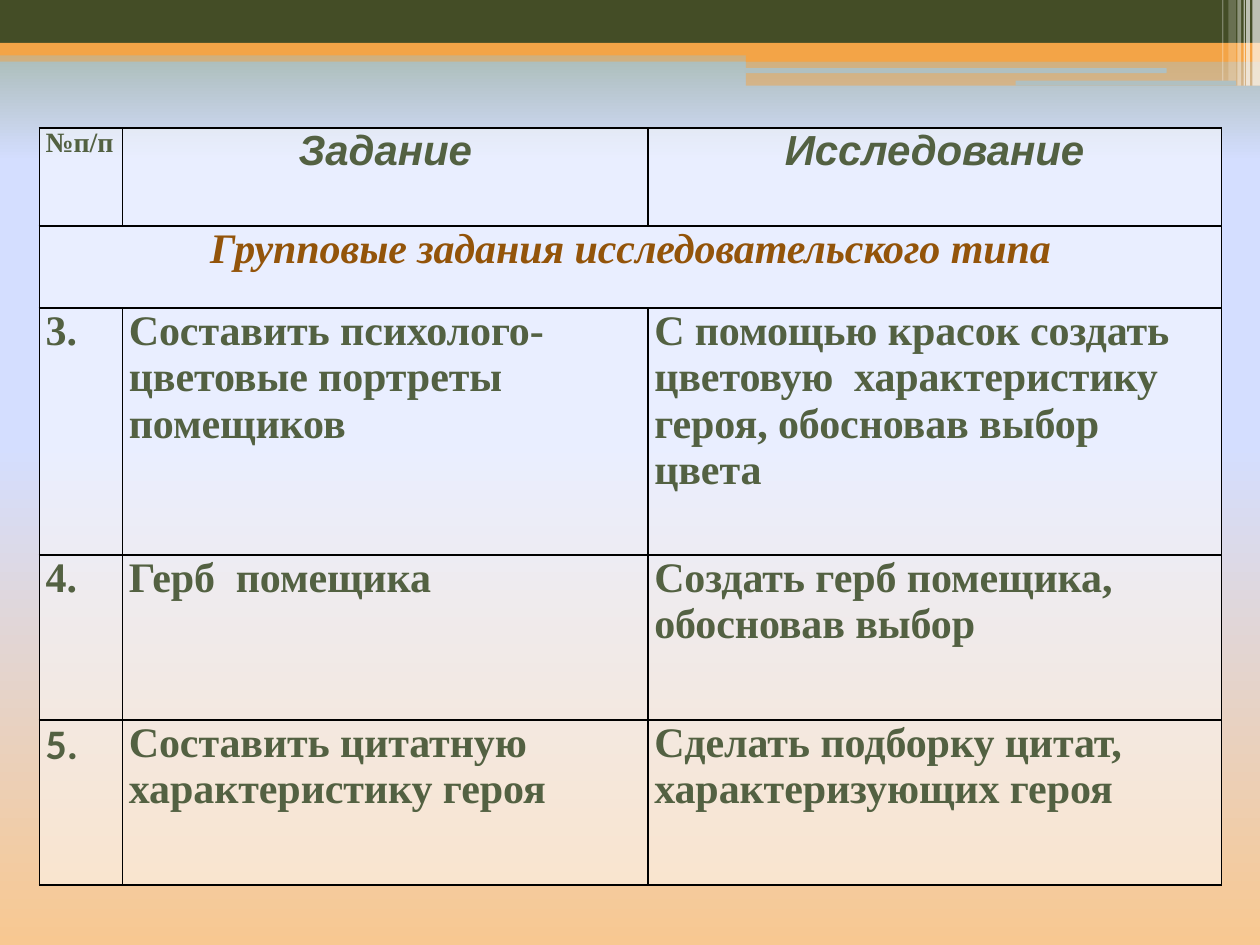
from dataclasses import dataclass

from lxml.etree import SubElement
from pptx import Presentation
from pptx.dml.color import RGBColor
from pptx.enum.shapes import MSO_SHAPE as Preset
from pptx.enum.text import PP_ALIGN as Align
from pptx.oxml import parse_xml
from pptx.oxml.ns import nsdecls, qn
from pptx.util import Inches, Pt


@dataclass(frozen=True)
class Theme:
    olive: str = "444D26"
    orange: str = "F3A447"
    white: str = "FFFFFF"
    mist: str = "B0C0C1"
    ink: str = "536142"
    brown: str = "93540A"
    border: str = "000000"
    sky: tuple = ((0, "F8C891"), (53, "D4DEFF"), (83, "D4DEFF"), (100, "96AB94"))
    serif: str = "Times New Roman"
    sans: str = "Arial"
    plain: str = "Calibri"
    small: int = 16
    large: int = 24


theme = Theme()


def paint(fill, owner, color, opacity=100):
    fill.solid()
    fill.fore_color.rgb = RGBColor.from_string(color)
    if opacity < 100:
        tint = owner.find(qn("a:solidFill"))[0]
        SubElement(tint, qn("a:alpha"), val=str(opacity * 1000))


deck = Presentation()
deck.slide_width, deck.slide_height = Inches(10), Inches(7.5)
COL, ROW = deck.slide_width // 1000, deck.slide_height // 750
slide = deck.slides.add_slide(deck.slide_layouts[6])

sky = slide.background.fill
sky.gradient()
sky.gradient_angle = 90
stops = next(slide.element.iter(qn("a:gsLst")))
for stop in list(stops):
    stops.remove(stop)
for position, color in theme.sky:
    stop = SubElement(stops, qn("a:gs"), pos=str(position * 1000))
    SubElement(stop, qn("a:srgbClr"), val=color)

banner = [
    (0, 40, 1000, 9, theme.orange, 50),
    (0, 0, 1000, 34, theme.olive, 100),
    (0, 34, 1000, 10, theme.orange, 100),
    (592, 39, 408, 10, theme.orange, 100),
    (592, 48, 408, 20, theme.orange, 50),
    (591, 54, 335, 4, theme.mist, 100),
    (806, 64, 175, 4, theme.mist, 100),
    (994, 0, 6, 68, theme.white, 65),
    (989, 0, 3, 68, theme.white, 65),
    (987, 0, 1, 68, theme.white, 60),
    (982, 0, 3, 68, theme.white, 40),
    (975, 0, 6, 64, theme.white, 20),
    (970, 0, 1, 64, theme.white, 30),
]
for left, top, width, height, color, opacity in banner:
    stripe = slide.shapes.add_shape(
        Preset.ROUNDED_RECTANGLE if color == theme.mist else Preset.RECTANGLE,
        left * COL, top * ROW, width * COL, height * ROW)
    stripe.shadow.inherit = False
    stripe.line.fill.background()
    paint(stripe.fill, stripe.element.spPr, color, opacity)

tasks = [
    ("№п/п", "Задание", "Исследование"),
    ("Групповые задания исследовательского типа", "", ""),
    ("3.", "Составить психолого-цветовые портреты помещиков",
     "С помощью красок создать цветовую  характеристику героя, обосновав выбор цвета"),
    ("4.", "Герб  помещика", "Создать герб помещика, обосновав выбор"),
    ("5.", "Составить цитатную характеристику героя",
     "Сделать подборку цитат, характеризующих героя"),
]
heading = (theme.sans, theme.large, theme.ink, True)
special_styles = {
    (0, 0): (theme.serif, theme.small, theme.ink, False),
    (0, 1): heading,
    (0, 2): heading,
    (1, 0): (theme.serif, theme.large, theme.brown, True),
    (4, 0): (theme.plain, theme.large, theme.ink, False),
}
body = (theme.serif, theme.large, theme.ink, False)
widths, heights = (66, 417, 455), (78, 65, 196, 131, 131)

task_table = slide.shapes.add_table(
    len(heights), len(widths), int(31.3 * COL), int(101.5 * ROW),
    sum(widths) * COL, sum(heights) * ROW).table
for column, width in zip(task_table.columns, widths):
    column.width = width * COL
for row, height in zip(task_table.rows, heights):
    row.height = height * ROW
task_table.cell(1, 0).merge(task_table.cell(1, 2))

for r, texts in enumerate(tasks):
    for c, text in enumerate(texts):
        cell = task_table.cell(r, c)
        cell.margin_left = cell.margin_right = 5 * COL
        cell.margin_top = cell.margin_bottom = 0
        cell_props = cell._tc.get_or_add_tcPr()
        paint(cell.fill, cell_props, theme.white, 50)
        for order, side in enumerate(("lnL", "lnR", "lnT", "lnB")):
            cell_props.insert(order, parse_xml(
                f'<a:{side} {nsdecls("a")} w="{Pt(1)}"><a:solidFill>'
                f'<a:srgbClr val="{theme.border}"/></a:solidFill></a:{side}>'))
        if not text:
            continue
        face, size, color, italic = special_styles.get((r, c), body)
        paragraph = cell.text_frame.paragraphs[0]
        paragraph.add_run().text = text
        paragraph.runs[0].font._element.set("spc", "-5")
        paragraph.alignment = Align.CENTER if italic else Align.LEFT
        font = paragraph.font
        font.name, font.size = face, Pt(size)
        font.bold, font.italic = True, italic
        font.color.rgb = RGBColor.from_string(color)

deck.save("out.pptx")
